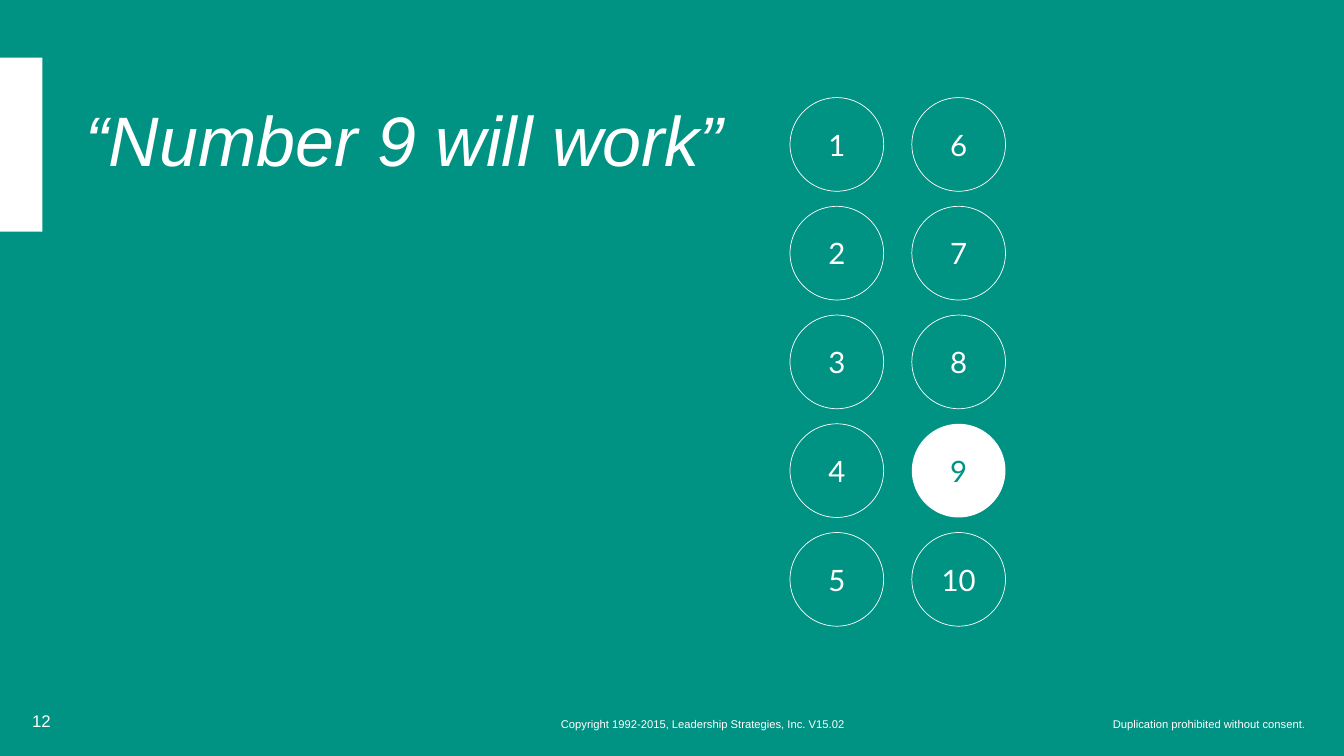
from pptx import Presentation
from pptx.dml.color import RGBColor
from pptx.enum.shapes import MSO_SHAPE as Shape
from pptx.enum.text import MSO_ANCHOR as Anchor, PP_ALIGN as Align
from pptx.util import Cm, Pt

WHITE = "FFFFFF"
TEAL = "009383"
ROWS = 5
PICK = 9


def paint(target, tone):
    target.solid()
    target.fore_color.rgb = RGBColor.from_string(tone)


def write(frame, text, align, tone, **style):
    frame.word_wrap = True
    frame.vertical_anchor = Anchor.MIDDLE
    para = frame.paragraphs[0]
    para.alignment = align
    run = para.add_run()
    run.text = text
    for name, value in style.items():
        setattr(run.font, name, value)
    paint(run.font.fill, tone)
    return para


def add_label(slide, box, text, align, size, **style):
    frame = slide.shapes.add_textbox(*map(Cm, box)).text_frame
    return write(frame, text, align, WHITE, name="Arial", size=Pt(size), **style)


def add_plain(slide, kind, box):
    shape = slide.shapes.add_shape(kind, *map(Cm, box))
    shape.shadow.inherit = False
    return shape


def add_bar(slide):
    bar = add_plain(slide, Shape.RECTANGLE, (0, 1.45, 1.07, 4.39))
    paint(bar.fill, WHITE)
    bar.line.fill.background()


def add_disc(slide, number):
    col, row = divmod(number - 1, ROWS)
    box = (19.91 + col * 3.07, 2.46 + row * 2.74, 2.36, 2.36)
    disc = add_plain(slide, Shape.OVAL, box)
    picked = number == PICK
    if picked:
        paint(disc.fill, WHITE)
        disc.line.fill.background()
    else:
        disc.fill.background()
        paint(disc.line.fill, WHITE)
        disc.line.width = Pt(0.5)
    frame = disc.text_frame
    for side in ("left", "right", "top", "bottom"):
        setattr(frame, f"margin_{side}", 0)
    tone = TEAL if picked else WHITE
    write(frame, str(number), Align.CENTER, tone, name="Lato", size=Pt(21))


def main():
    deck = Presentation()
    deck.slide_width, deck.slide_height = Cm(33.87), Cm(19.05)
    slide = deck.slides.add_slide(deck.slide_layouts[6])
    paint(slide.background.fill, TEAL)
    add_bar(slide)
    title = add_label(slide, (1.91, 1.91, 20.55, 3.45), "“Number 9 will work”",
                      Align.LEFT, 50, italic=True)
    title.line_spacing = 0.9
    add_label(slide, (0.56, 17.65, 7.62, 1.02), "12", Align.LEFT, 12)
    add_label(slide, (9.13, 17.73, 17.17, 1.02),
              "Copyright 1992-2015, Leadership Strategies, Inc. V15.02",
              Align.CENTER, 8)
    add_label(slide, (27.1, 17.73, 6.05, 1.02),
              "Duplication prohibited without consent.", Align.RIGHT, 8)
    for number in range(1, 2 * ROWS + 1):
        add_disc(slide, number)
    deck.save("out.pptx")


if __name__ == "__main__":
    main()
